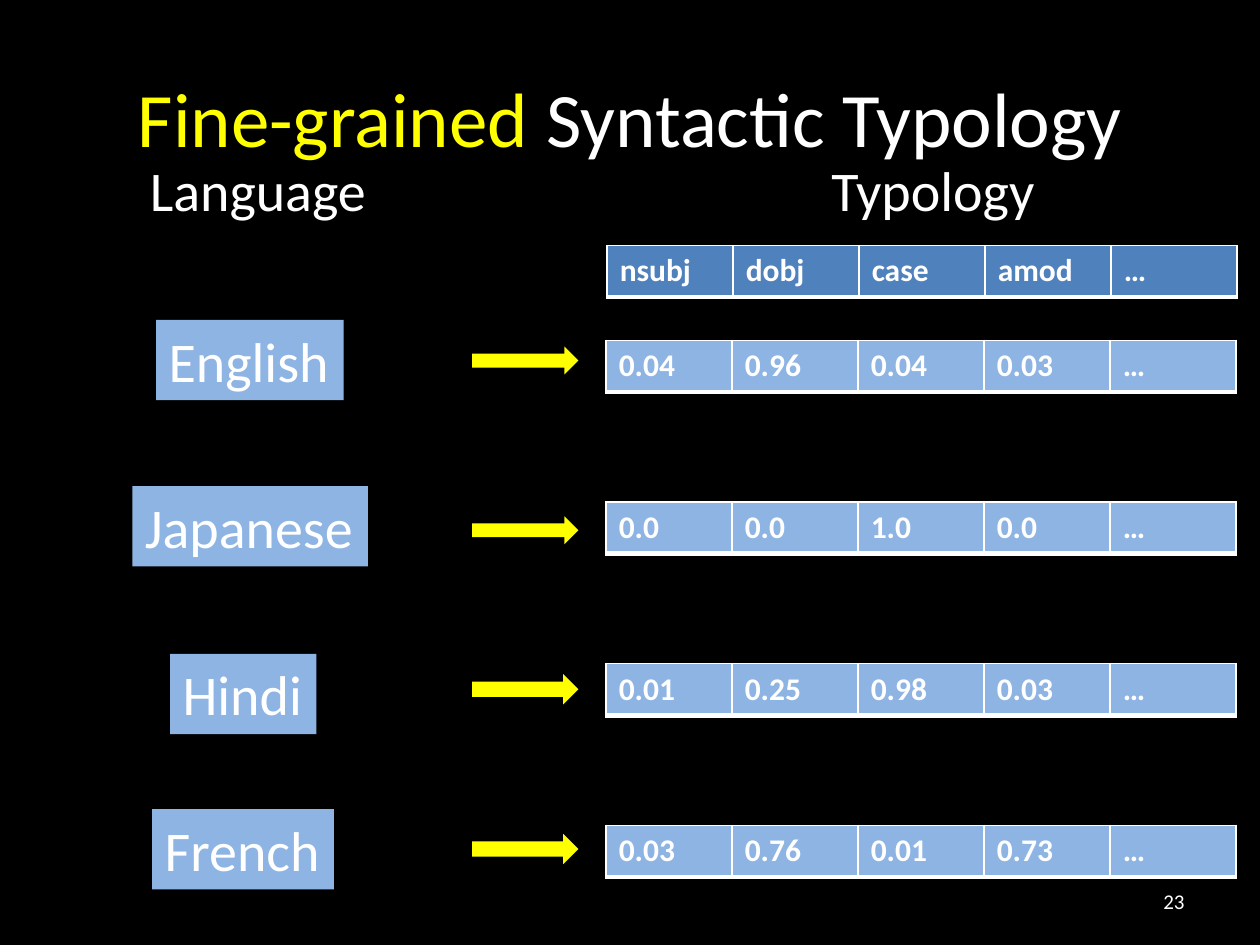
from dataclasses import dataclass

import pptx
import pptx.dml.color
import pptx.enum.shapes
import pptx.enum.text
import pptx.oxml
import pptx.oxml.ns
import pptx.util
from pptx.util import Cm

WHITE, YELLOW, BLACK = "FFFFFF", "FFFF00", "000000"
HEADER_BLUE, LIGHT_BLUE = "4F81BD", "8EB4E3"
ALIGN = pptx.enum.text.PP_ALIGN
ANCHOR = pptx.enum.text.MSO_ANCHOR
SHAPE = pptx.enum.shapes.MSO_SHAPE


@dataclass
class Language:
    name: str
    left: float
    top: float
    width: float
    arrow_top: float
    arrow_height: float
    values: list[str]


LANGUAGES = [
    Language("English", 3.15, 6.45, 3.78, 6.99, 0.56, ["0.04", "0.96", "0.04", "0.03", "…"]),
    Language("Japanese", 2.67, 9.8, 4.75, 10.41, 0.56, ["0.0", "0.0", "1.0", "0.0", "…"]),
    Language("Hindi", 3.43, 13.18, 2.95, 13.59, 0.61, ["0.01", "0.25", "0.98", "0.03", "…"]),
    Language("French", 3.07, 16.31, 3.66, 16.81, 0.61, ["0.03", "0.76", "0.01", "0.73", "…"]),
]
RELATIONS = ["nsubj", "dobj", "case", "amod", "…"]
TABLE_TOP, TABLE_STEP = 6.86, 3.26
COLUMN, ROW = 2.54, 1.04


def paint(target, color: str) -> None:
    """Give a fill one solid colour."""
    target.solid()
    target.fore_color.rgb = rgb(color)


def rgb(color: str) -> pptx.dml.color.RGBColor:
    return pptx.dml.color.RGBColor.from_string(color)


def style(p, size: float, align=ALIGN.LEFT, bold: bool = False) -> None:
    p.alignment = align
    p.font.name = "Calibri"
    p.font.size = pptx.util.Pt(size)
    p.font.bold = bold
    p.font.color.rgb = rgb(WHITE)


def add_text(s, left: float, top: float, width: float, height: float,
             runs: list[tuple[str, str]], size: float, align=ALIGN.LEFT,
             anchor=ANCHOR.MIDDLE) -> None:
    tf = s.shapes.add_textbox(Cm(left), Cm(top), Cm(width), Cm(height)).text_frame
    tf.word_wrap = True
    tf.vertical_anchor = anchor
    p = tf.paragraphs[0]
    style(p, size, align)
    for text, color in runs:
        r = p.add_run()
        r.text = text
        if color != WHITE:
            r.font.color.rgb = rgb(color)


def add_label(s, text: str, left: float, top: float, width: float,
              fill: str | None = None) -> None:
    sp = s.shapes.add_textbox(Cm(left), Cm(top), Cm(width), Cm(1.62))
    if fill:
        paint(sp.fill, fill)
    tf = sp.text_frame
    tf.word_wrap = False
    tf.auto_size = pptx.enum.text.MSO_AUTO_SIZE.SHAPE_TO_FIT_TEXT
    tf.text = text
    style(tf.paragraphs[0], 32)


def add_arrow(s, top: float, height: float) -> None:
    sp = s.shapes.add_shape(SHAPE.RIGHT_ARROW, Cm(9.52), Cm(top), Cm(2.14), Cm(height))
    sp.shadow.inherit = False
    paint(sp.fill, YELLOW)
    sp.line.fill.background()


def add_borders(cell) -> None:
    """White cell borders, heavier along the bottom."""
    tc_pr = cell._tc.get_or_add_tcPr()
    for i, (side, points) in enumerate([("L", 1), ("R", 1), ("T", 1), ("B", 3)]):
        tc_pr.insert(i, pptx.oxml.parse_xml(
            f'<a:ln{side} {pptx.oxml.ns.nsdecls("a")} w="{pptx.util.Pt(points)}">'
            f'<a:solidFill><a:srgbClr val="{WHITE}"/></a:solidFill></a:ln{side}>'))


def add_row_table(s, left: float, top: float, values: list[str], fill: str) -> None:
    table = s.shapes.add_table(1, len(values), Cm(left), Cm(top),
                               Cm(COLUMN * len(values)), Cm(ROW)).table
    for cell, value in zip(table.iter_cells(), values):
        cell.text = value
        style(cell.text_frame.paragraphs[0], 18, bold=True)
        paint(cell.fill, fill)
        add_borders(cell)


def main() -> None:
    prs = pptx.Presentation()
    prs.slide_width, prs.slide_height = Cm(25.4), Cm(19.05)
    s = prs.slides.add_slide(prs.slide_layouts[6])
    paint(s.background.fill, BLACK)

    # Title and slide number
    add_text(s, 1.27, 0.76, 22.86, 3.18,
             [("Fine-grained", YELLOW), (" Syntactic Typology", WHITE)], 44, ALIGN.CENTER)
    add_text(s, 18.2, 17.65, 5.93, 1.02, [("23", WHITE)], 12, ALIGN.RIGHT)

    # Column headings
    add_label(s, "Language", 2.77, 3.02, 4.93)
    add_label(s, "Typology", 16.51, 3.02, 4.65)
    add_row_table(s, 12.24, 4.95, RELATIONS, HEADER_BLUE)

    # One row per language: name, arrow, typology vector
    for i, lang in enumerate(LANGUAGES):
        add_label(s, lang.name, lang.left, lang.top, lang.width, LIGHT_BLUE)
        add_arrow(s, lang.arrow_top, lang.arrow_height)
        add_row_table(s, 12.22, TABLE_TOP + i * TABLE_STEP, lang.values, LIGHT_BLUE)

    prs.save("out.pptx")


if __name__ == "__main__":
    main()
